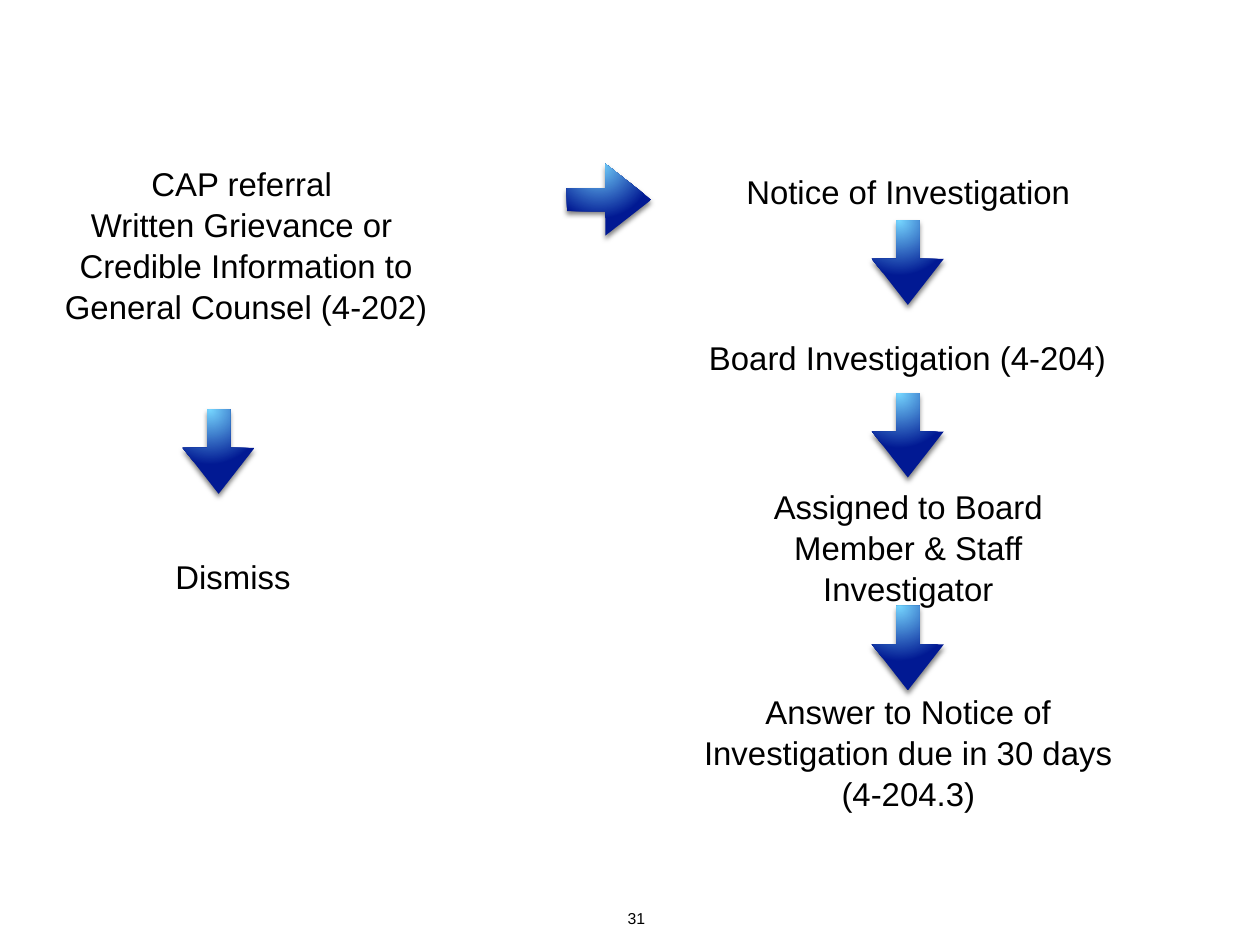
from lxml import etree
from pptx import Presentation
from pptx.dml.color import RGBColor
from pptx.enum.dml import MSO_FILL
from pptx.enum.shapes import MSO_SHAPE
from pptx.enum.text import MSO_ANCHOR, PP_ALIGN
from pptx.oxml import parse_xml
from pptx.oxml.ns import nsdecls, qn
from pptx.util import Inches, Pt

RIGHT_ARROW = MSO_SHAPE.RIGHT_ARROW
GRADIENT = MSO_FILL.GRADIENT
MIDDLE, TOP = MSO_ANCHOR.MIDDLE, MSO_ANCHOR.TOP
CENTER = PP_ALIGN.CENTER

BLACK = RGBColor(0x00, 0x00, 0x00)
SKY = RGBColor(0x76, 0xD6, 0xFF)
NAVY = RGBColor(0x01, 0x19, 0x93)

ARROW_W, ARROW_H = 0.67, 0.57
STEP_X = 6.87

# text, left, top, width, height, wrap
STEPS = [
    ("CAP referral \vWritten Grievance or \vCredible Information to\nGeneral Counsel (4-202)",
     0.32, 1.29, 3.27, 1.3, True),
    ("Notice of Investigation", 5.9, 1.33, 2.62, 0.36, False),
    ("Dismiss", 1.37, 4.39, 0.96, 0.36, False),
    ("Board Investigation (4-204)", 5.26, 2.65, 3.89, 0.36, True),
    ("Assigned to Board Member & Staff Investigator", 5.64, 3.84, 3.14, 0.99, True),
    ("Answer to Notice of Investigation due in 30 days (4-204.3)",
     5.51, 5.47, 3.4, 0.99, True),
]

# left, top, rotation
ARROWS = [(STEP_X, y, 90) for y in (1.8, 3.17, 4.86)] + [(1.4, 3.3, 90), (4.5, 1.3, 0)]


class FlowSlide:
    font = "Arial"

    def __init__(self, s):
        self.s = s

    def text(self, text, x, y, w, h, wrap=True, size=18.8, inset=0.02,
             anchor=MIDDLE, spacing=1.04):
        box = self.s.shapes.add_textbox(Inches(x), Inches(y), Inches(w), Inches(h))
        tf = box.text_frame
        tf.word_wrap = wrap
        tf.vertical_anchor = anchor
        tf.margin_left = tf.margin_right = Inches(inset)
        tf.margin_top = tf.margin_bottom = Inches(inset)
        tf.text = text
        for p in tf.paragraphs:
            p.alignment = CENTER
            p.line_spacing = spacing
            p.font.name = self.font
            p.font.size = Pt(size)
            p.font.color.rgb = BLACK

    def arrow(self, x, y, rotation):
        sp = self.s.shapes.add_shape(RIGHT_ARROW, Inches(x), Inches(y),
                                     Inches(ARROW_W), Inches(ARROW_H))
        sp.rotation = rotation
        sp.adjustments[0], sp.adjustments[1] = 0.32, 0.64
        sp.line.fill.background()
        self.radial_fill(sp)
        self.drop_shadow(sp)

    def radial_fill(self, sp):
        """Blend from sky at a point above the shape to navy, whatever its rotation."""
        fill = sp.fill
        fill.gradient()
        assert fill.type == GRADIENT
        for stop, color, position in zip(fill.gradient_stops, (SKY, NAVY), (0, 1)):
            stop.color.rgb = color
            stop.position = position
        grad = sp._element.spPr.find(qn("a:gradFill"))
        grad.set("rotWithShape", "0")
        grad.remove(grad.find(qn("a:lin")))
        path = etree.SubElement(grad, qn("a:path"), path="circle")
        etree.SubElement(path, qn("a:fillToRect"),
                         l="38000", t="-20000", r="62000", b="120000")

    def drop_shadow(self, sp):
        sp.shadow.inherit = False
        effects = sp._element.spPr.find(qn("a:effectLst"))
        effects.append(parse_xml(
            f'<a:outerShdw {nsdecls("a")} blurRad="{Pt(3)}" dist="{Pt(2)}" '
            f'dir="5400000" rotWithShape="0"><a:srgbClr val="{BLACK}">'
            '<a:alpha val="50000"/></a:srgbClr></a:outerShdw>'))


def main():
    prs = Presentation()
    prs.slide_width, prs.slide_height = Inches(10), Inches(7.5)
    flow = FlowSlide(prs.slides.add_slide(prs.slide_layouts[6]))
    for step in STEPS:
        flow.text(*step)
    for arrow in ARROWS:
        flow.arrow(*arrow)
    flow.text("31", 4.9, 7.15, 0.3, 0.26, wrap=False, size=9, inset=0.06,
              anchor=TOP, spacing=1.0)
    prs.save("out.pptx")


if __name__ == "__main__":
    main()
